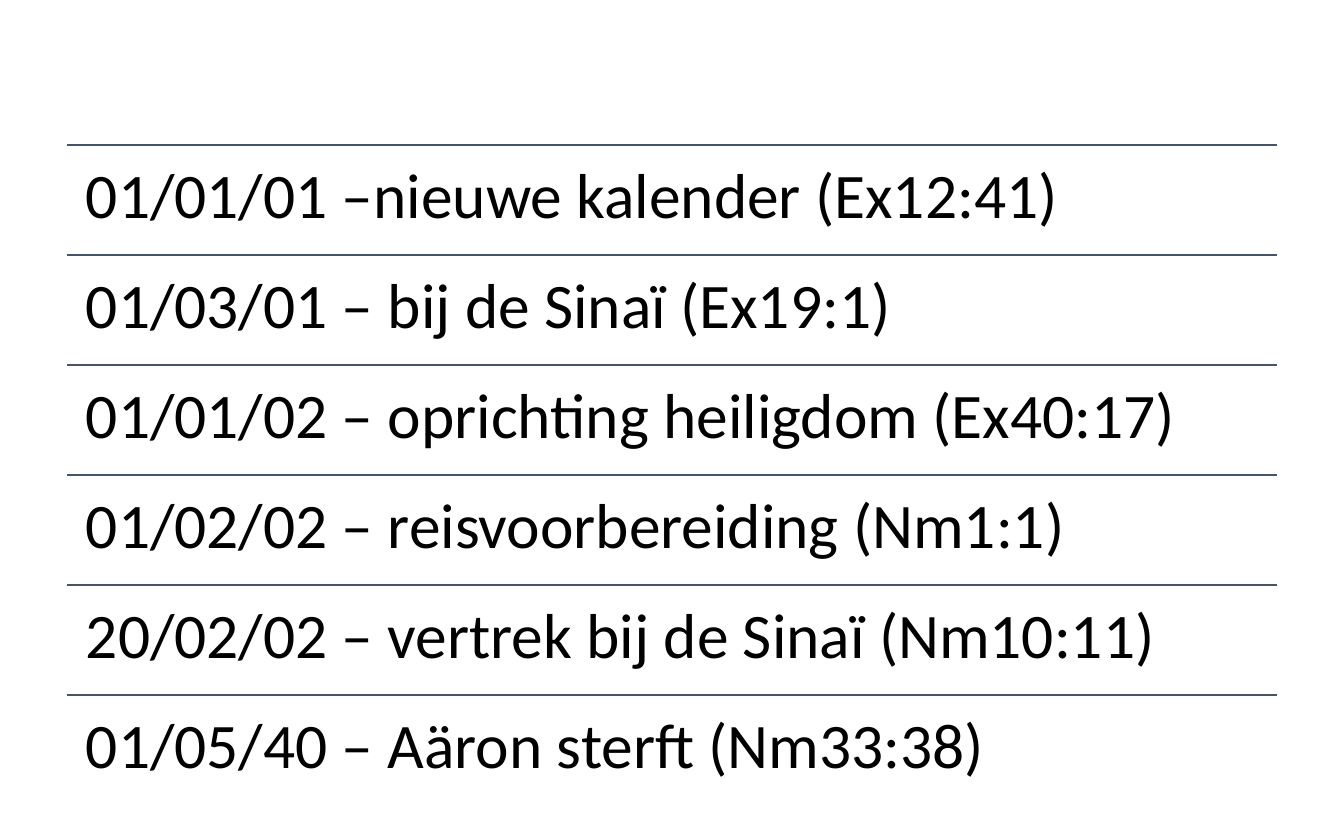
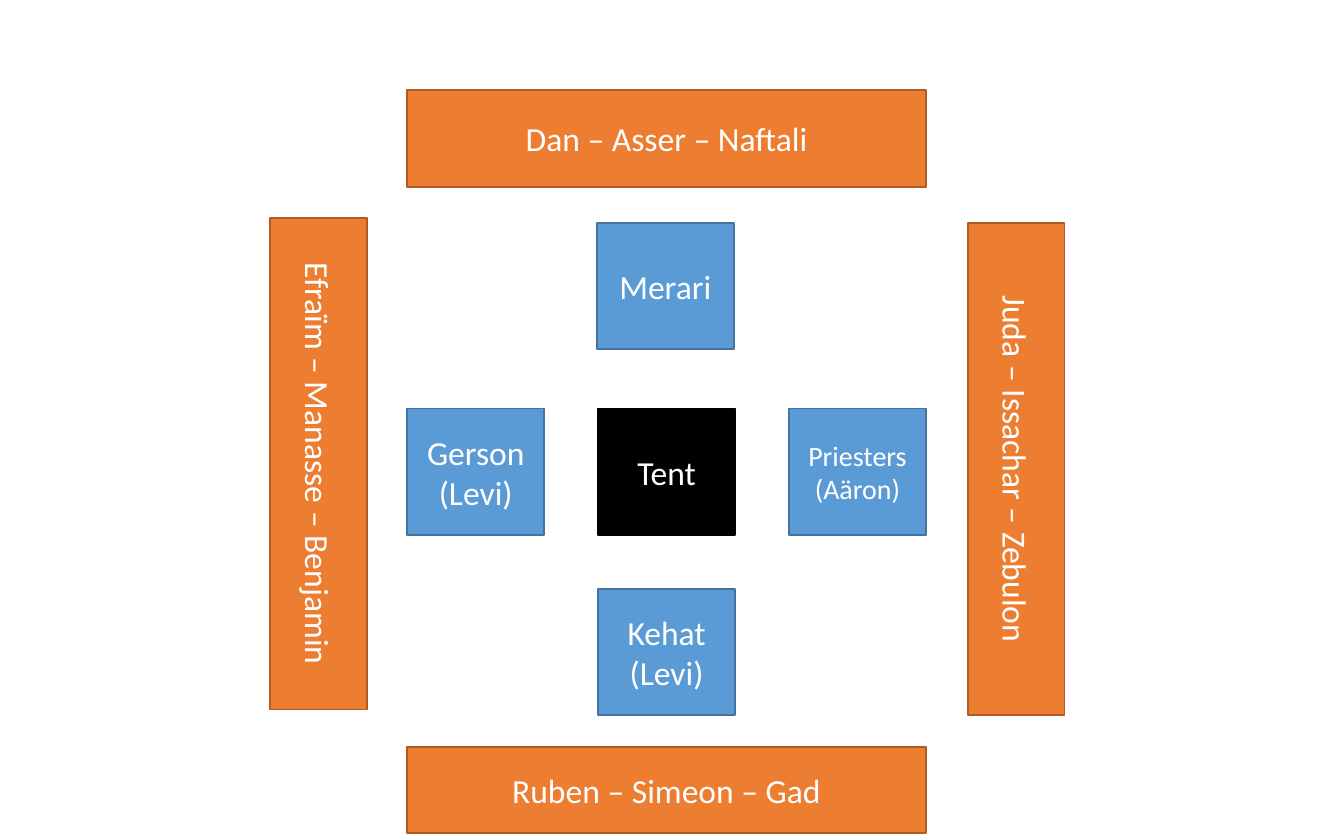
import dataclasses

import pptx
import pptx.dml.color
import pptx.enum.shapes
import pptx.enum.text
import pptx.oxml
import pptx.oxml.ns
import pptx.presentation
import pptx.shapes.autoshape
import pptx.shapes.connector
import pptx.slide
import pptx.text.text
import pptx.util

Inches = pptx.util.Inches
Pt = pptx.util.Pt
RGBColor = pptx.dml.color.RGBColor

BLACK = RGBColor(0x00, 0x00, 0x00)
WHITE = RGBColor(0xFF, 0xFF, 0xFF)
SLATE = RGBColor(0x44, 0x54, 0x6A)
BLUE = RGBColor(0x5B, 0x9B, 0xD5)
BLUE_EDGE = RGBColor(0x43, 0x73, 0x9E)
ORANGE = RGBColor(0xED, 0x7D, 0x31)
ORANGE_EDGE = RGBColor(0xAF, 0x5C, 0x24)

FONT = "Calibri"
LINE_WIDTH = Pt(1)

EVENTS = [
    "01/01/01 –nieuwe kalender (Ex12:41)",
    "01/03/01 – bij de Sinaï (Ex19:1)",
    "01/01/02 – oprichting heiligdom (Ex40:17)",
    "01/02/02 – reisvoorbereiding (Nm1:1)",
    "20/02/02 – vertrek bij de Sinaï (Nm10:11)",
    "01/05/40 – Aäron sterft (Nm33:38)",
]
LIST_LEFT, LIST_WIDTH = 0.5, 9
FIRST_TOP, LAST_TOP = 1.08, 5.17
ROW_HEIGHT = (LAST_TOP - FIRST_TOP) / (len(EVENTS) - 1)
EVENT_FRAME = {
    "word_wrap": True,
    "margin_left": Inches(0.14),
    "margin_top": Inches(0.14),
    "margin_right": Inches(0.14),
    "margin_bottom": Inches(0.14),
}
EVENT_PARAGRAPH = {"line_spacing": 0.9, "space_after": Pt(12)}
CAMP_FRAME = {
    "word_wrap": True,
    "vertical_anchor": pptx.enum.text.MSO_ANCHOR.MIDDLE,
}
CAMP_PARAGRAPH = {"alignment": pptx.enum.text.PP_ALIGN.CENTER}


@dataclasses.dataclass(frozen=True)
class Style:
    width: float
    height: float
    fill: RGBColor
    edge: RGBColor


@dataclasses.dataclass(frozen=True)
class Camp:
    lines: tuple[str, ...]
    left: float
    top: float
    style: Style
    size: int = 18
    rotation: int = 0


CLAN = Style(1.02, 0.94, BLUE, BLUE_EDGE)
TENT = dataclasses.replace(CLAN, fill=BLACK, edge=BLACK)
NORTH = Style(3.86, 0.72, ORANGE, ORANGE_EDGE)
SOUTH = dataclasses.replace(NORTH, height=0.64)
SIDE = dataclasses.replace(NORTH, width=3.66)

WEST_LEFT, CENTER_LEFT, EAST_LEFT = 3.03, 4.45, 5.87
MIDDLE_TOP = 3.04

CAMPS = [
    Camp(("Merari",), 4.44, 1.66, CLAN),
    Camp(("Gerson", "(Levi)"), WEST_LEFT, MIDDLE_TOP, CLAN),
    Camp(("Priesters", "(Aäron)"), EAST_LEFT, MIDDLE_TOP, CLAN, size=15),
    Camp(("Kehat", "(Levi)"), CENTER_LEFT, 4.38, CLAN),
    Camp(("Tent",), CENTER_LEFT, MIDDLE_TOP, TENT),
    Camp(("Dan – Asser – Naftali",), WEST_LEFT, 0.67, NORTH),
    Camp(("Ruben – Simeon – Gad",), WEST_LEFT, 5.56, SOUTH),
    Camp(("Juda – Issachar – Zebulon",), 5.73, 3.13, SIDE, rotation=90),
    Camp(("Efraïm – Manasse – Benjamin",), 0.54, 3.09, SIDE, rotation=90),
]


def apply_format(target: object, values: dict[str, object]) -> None:
    for name, value in values.items():
        setattr(target, name, value)


def write_lines(
    frame: pptx.text.text.TextFrame,
    lines: tuple[str, ...],
    size: int,
    color: RGBColor,
    frame_format: dict[str, object],
    para_format: dict[str, object],
) -> None:
    """Write one paragraph per line."""
    apply_format(frame, frame_format)
    for index, line in enumerate(lines):
        para = frame.add_paragraph() if index else frame.paragraphs[0]
        apply_format(para, para_format)
        span = para.add_run()
        span.text = line
        apply_format(span.font, {"name": FONT, "size": Pt(size)})
        span.font.color.rgb = color


def style_line(
    shape: pptx.shapes.autoshape.Shape | pptx.shapes.connector.Connector,
    color: RGBColor,
) -> None:
    shape.line.color.rgb = color
    shape.line.width = LINE_WIDTH


def add_blank_page(deck: pptx.presentation.Presentation) -> pptx.slide.Slide:
    return deck.slides.add_slide(deck.slide_layouts[6])


def add_event(shapes: pptx.shapes.autoshape.Shape, text: str, top: float) -> None:
    """Draw a rule with its dated event below it."""
    left, right = Inches(LIST_LEFT), Inches(LIST_LEFT + LIST_WIDTH)
    rule = shapes.add_connector(
        pptx.enum.shapes.MSO_CONNECTOR.STRAIGHT, left, Inches(top), right, Inches(top)
    )
    style_line(rule, SLATE)
    properties = rule.element.spPr
    properties.append(pptx.oxml.parse_xml(
        f"<a:effectLst {pptx.oxml.ns.nsdecls('a')}/>"
    ))
    box = shapes.add_textbox(left, Inches(top), Inches(LIST_WIDTH), Inches(ROW_HEIGHT))
    write_lines(box.text_frame, (text,), 34, BLACK, EVENT_FRAME, EVENT_PARAGRAPH)


def add_camp(page: pptx.slide.Slide, camp: Camp) -> None:
    style = camp.style
    box = page.shapes.add_shape(
        pptx.enum.shapes.MSO_SHAPE.RECTANGLE,
        Inches(camp.left), Inches(camp.top),
        Inches(style.width), Inches(style.height),
    )
    box.shadow.inherit = False
    box.rotation = camp.rotation
    box.fill.solid()
    box.fill.fore_color.rgb = style.fill
    style_line(box, style.edge)
    write_lines(
        box.text_frame, camp.lines, camp.size, WHITE, CAMP_FRAME, CAMP_PARAGRAPH
    )


def add_calendar_page(deck: pptx.presentation.Presentation) -> None:
    group = add_blank_page(deck).shapes.add_group_shape()
    for row, event in enumerate(EVENTS):
        add_event(group.shapes, event, FIRST_TOP + row * ROW_HEIGHT)


def add_camp_page(deck: pptx.presentation.Presentation) -> None:
    page = add_blank_page(deck)
    for camp in CAMPS:
        add_camp(page, camp)


def main() -> None:
    deck = pptx.Presentation()
    deck.slide_width = Inches(10)
    deck.slide_height = Inches(6.25)
    add_calendar_page(deck)
    add_camp_page(deck)
    deck.save("out.pptx")


if __name__ == "__main__":
    main()
